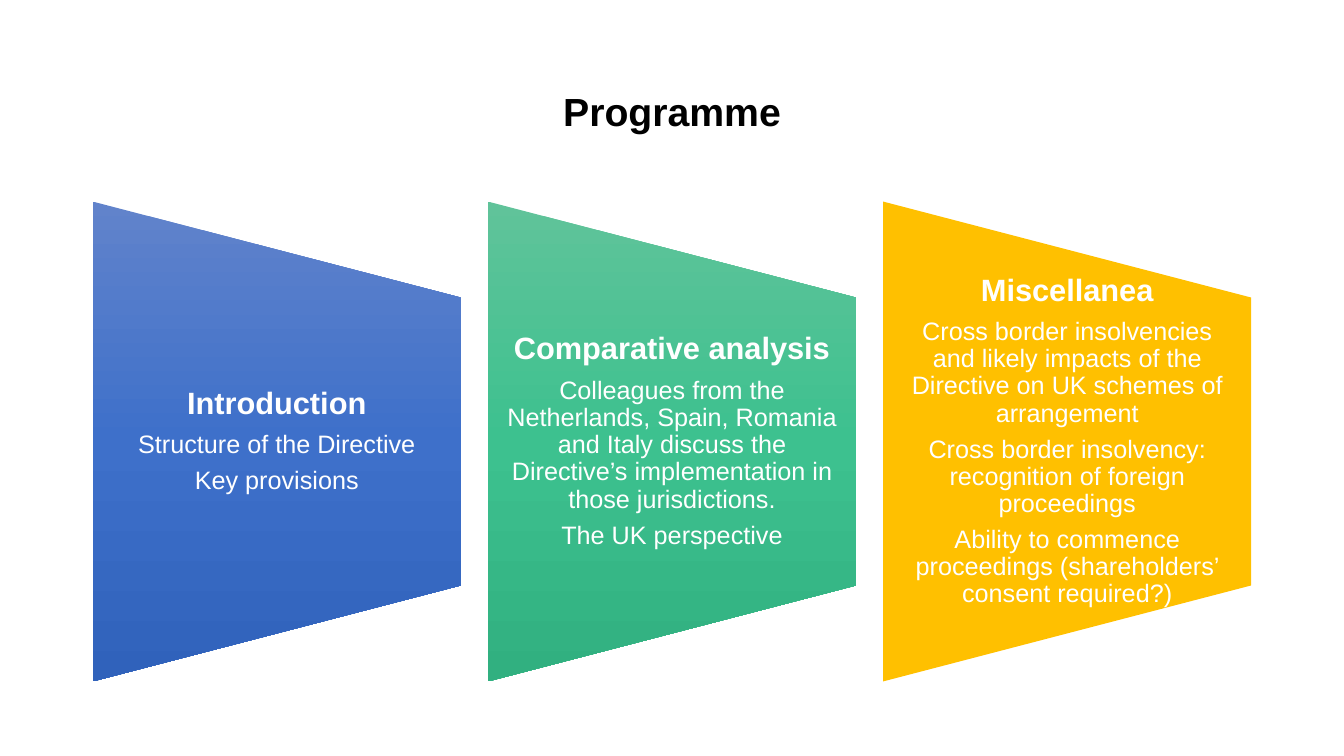
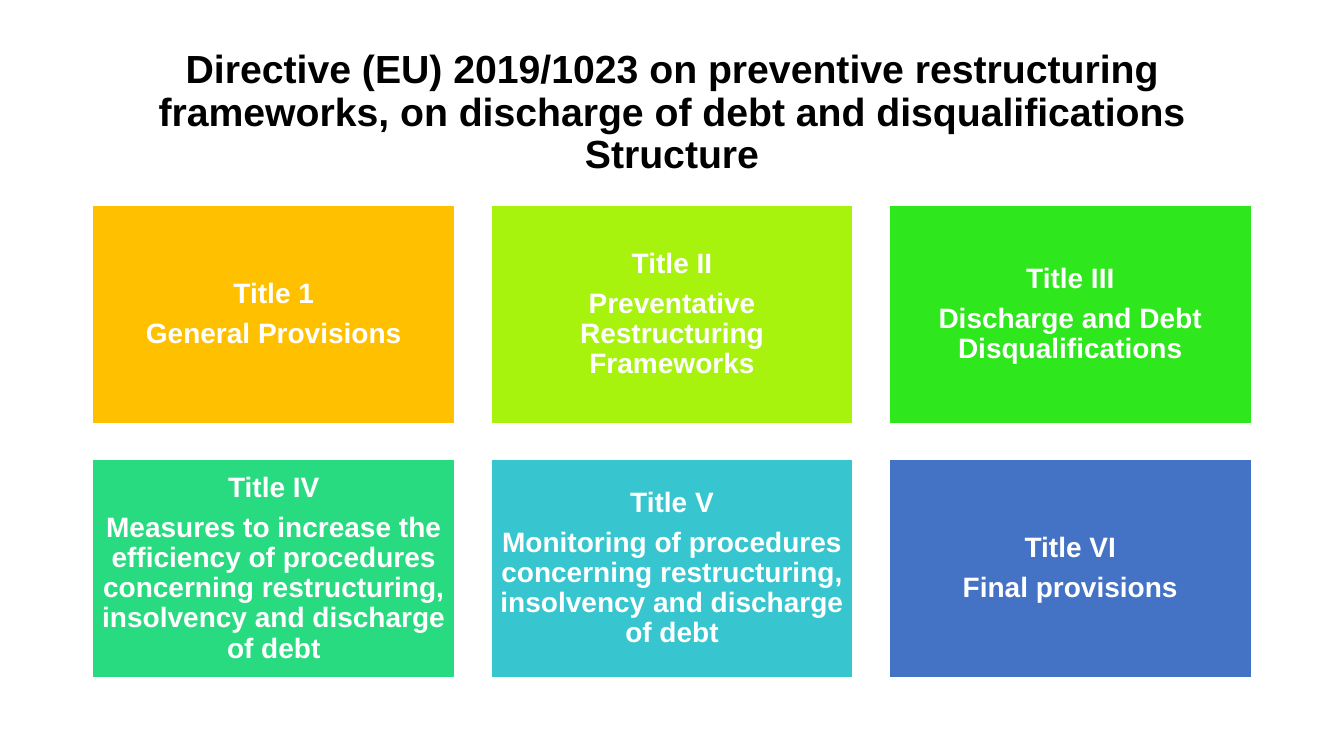
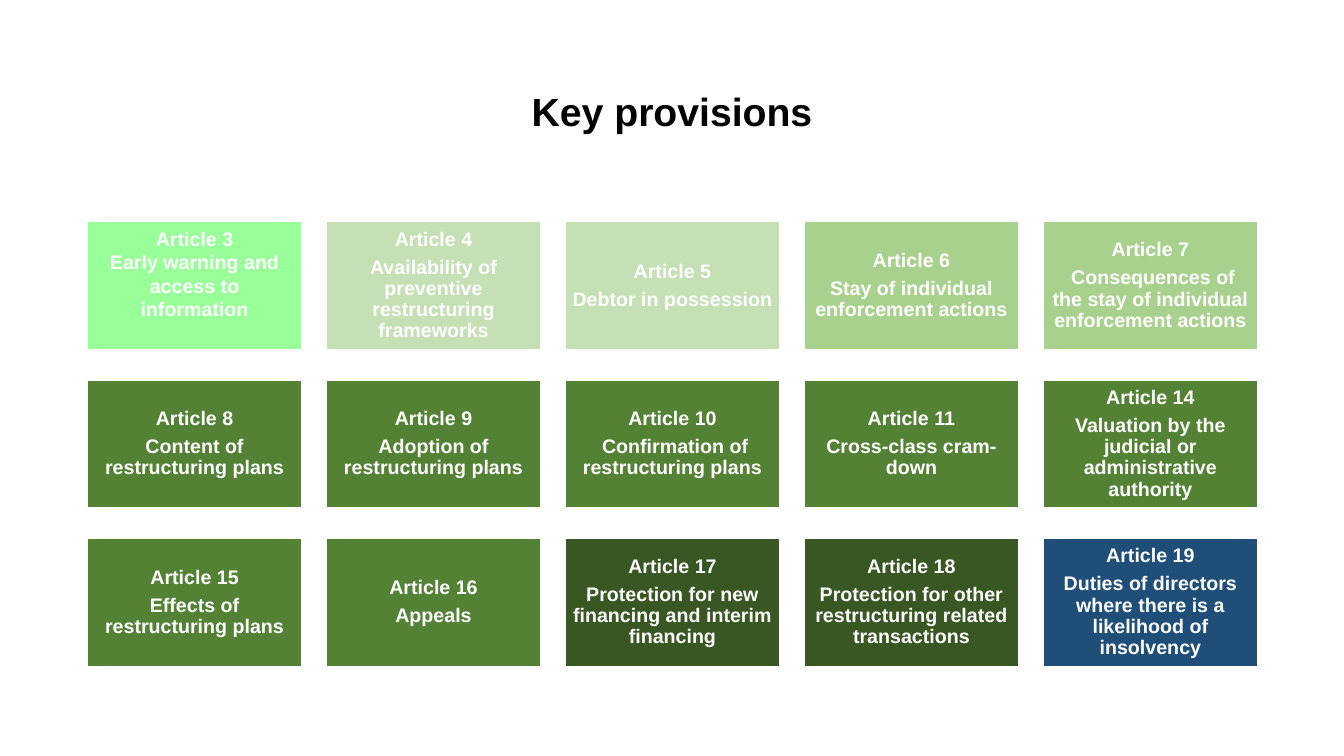
import pptx
import pptx.util
import pptx.dml.color
import pptx.enum.shapes
import pptx.enum.text
import pptx.oxml
import pptx.oxml.ns

Inches = pptx.util.Inches
Pt = pptx.util.Pt
RGB = pptx.dml.color.RGBColor.from_string
SHAPE = pptx.enum.shapes.MSO_SHAPE
ANCHOR = pptx.enum.text.MSO_ANCHOR
CENTER = pptx.enum.text.PP_ALIGN.CENTER

COLORS = {
    "black": "000000", "white": "FFFFFF", "amber": "FFC000",
    "lime": "A7F30E", "green": "2EE71C", "emerald": "29DB80",
    "teal": "37C6CF", "blue": "4472C4", "mint": "99FF99",
    "pale": "C5E0B4", "light": "A9D18E", "mid": "548235",
    "dark": "385723", "navy": "1F4E79",
}
GRADIENTS = {
    "blue_fade": ("6183CB", "3E70CA", "3062BB"),
    "green_fade": ("60C39A", "3DC18F", "31B080"),
}

prs = pptx.Presentation()
prs.slide_width = Inches(13.33)
prs.slide_height = Inches(7.5)
W, H = prs.slide_width, prs.slide_height


def write(tf, lines, sizes, color="white", inset=(0.1, 0.05), spacing=0.9, after=0.35):
    tf.word_wrap = True
    tf.auto_size = pptx.enum.text.MSO_AUTO_SIZE.NONE
    tf.vertical_anchor = ANCHOR.MIDDLE
    tf.margin_left = tf.margin_right = Inches(inset[0])
    tf.margin_top = tf.margin_bottom = Inches(inset[1])
    for i, line in enumerate(lines):
        p = tf.paragraphs[0] if i == 0 else tf.add_paragraph()
        size = sizes[min(i, len(sizes) - 1)]
        p.text = line
        p.alignment = CENTER
        p.line_spacing = spacing
        p.space_before = Pt(0)
        p.space_after = Pt(size * after)
        p.font.name = "Arial"
        p.font.size = Pt(size)
        p.font.bold = i == 0 or len(sizes) == 1
        p.font.color.rgb = RGB(COLORS[color])


def add_slide(title):
    s = prs.slides.add_slide(prs.slide_layouts[5])
    sp = s.shapes.title
    sp.left, sp.top = int(W * 0.07), int(H * 0.05)
    sp.width, sp.height = int(W * 0.86), int(H * 0.2)
    write(sp.text_frame, [title], [28], "black", after=0)
    return s


s = add_slide("Programme")
programme = [
    ("blue_fade", ["Introduction", "Structure of the Directive", "Key provisions"]),
    ("green_fade", [
        "Comparative analysis",
        "Colleagues from the Netherlands, Spain, Romania and Italy discuss "
        "the Directive’s implementation in those jurisdictions.",
        "The UK perspective"]),
    ("amber", [
        "Miscellanea",
        "Cross border insolvencies and likely impacts of the Directive on "
        "UK schemes of arrangement",
        "Cross border insolvency: recognition of foreign proceedings",
        "Ability to commence proceedings (shareholders’ consent required?)"]),
]
left, top, pitch, width, height = 0.92, 2, 3.92, 3.65, 4.76
for col, (fill, lines) in enumerate(programme):
    x = left + col * pitch
    sp = s.shapes.add_shape(
        SHAPE.FLOWCHART_MANUAL_OPERATION,
        Inches(x + (width - height) / 2), Inches(top + (height - width) / 2),
        Inches(height), Inches(width))
    sp.rotation = 270
    sp.shadow.inherit = False
    sp.line.fill.background()
    if fill in GRADIENTS:
        sp.fill.gradient()
        stops = "".join(
            f'<a:gs pos="{i * 50000}"><a:srgbClr val="{c}"/></a:gs>'
            for i, c in enumerate(GRADIENTS[fill]))
        spPr = sp.element.spPr
        spPr.replace(spPr.find(pptx.oxml.ns.qn("a:gradFill")), pptx.oxml.parse_xml(
            f'<a:gradFill {pptx.oxml.ns.nsdecls("a")} rotWithShape="0">'
            f'<a:gsLst>{stops}</a:gsLst><a:lin ang="5400000" scaled="0"/></a:gradFill>'))
    else:
        sp.fill.solid()
        sp.fill.fore_color.rgb = RGB(COLORS[fill])
    tb = s.shapes.add_textbox(
        Inches(x), Inches(top + height * 0.2), Inches(width), Inches(height * 0.6))
    write(tb.text_frame, lines, [22, 18], inset=(0.15, 0))

titles = [
    ("amber", "Title 1", "General Provisions"),
    ("lime", "Title II", "Preventative Restructuring Frameworks"),
    ("green", "Title III", "Discharge and Debt Disqualifications"),
    ("emerald", "Title IV", "Measures to increase the efficiency of procedures "
     "concerning restructuring, insolvency and discharge of debt"),
    ("teal", "Title V", "Monitoring of procedures concerning restructuring, "
     "insolvency and discharge of debt"),
    ("blue", "Title VI", "Final provisions"),
]
articles = [
    ("mint", "Article 3", "Early warning and access to information"),
    ("pale", "Article 4", "Availability of preventive restructuring frameworks"),
    ("pale", "Article 5", "Debtor in possession"),
    ("light", "Article 6", "Stay of individual enforcement actions"),
    ("light", "Article 7", " Consequences of the stay of individual enforcement actions"),
    ("mid", "Article 8", "Content of restructuring plans"),
    ("mid", "Article 9", "Adoption of restructuring plans"),
    ("mid", "Article 10", " Confirmation of restructuring plans"),
    ("mid", "Article 11", "Cross-class cram-down"),
    ("mid", "Article 14", "Valuation by the judicial or administrative authority"),
    ("mid", "Article 15", "Effects of restructuring plans"),
    ("mid", "Article 16", "Appeals"),
    ("dark", "Article 17", "Protection for new financing and interim financing"),
    ("dark", "Article 18", "Protection for other restructuring related transactions"),
    ("navy", "Article 19", "Duties of directors where there is a likelihood of insolvency"),
]
boards = [
    ("Directive (EU) 2019/1023 on preventive restructuring frameworks, on "
     "discharge of debt and disqualifications\vStructure",
     titles, 3, (0.92, 2.04), (3.95, 2.52), (3.59, 2.16), 20, 0.08),
    ("Key provisions",
     articles, 5, (0.87, 2.2), (2.37, 1.57), (2.12, 1.27), 14, 0.06),
]
for title, cards, cols, origin, pitch, size, pts, inset in boards:
    s = add_slide(title)
    for i, (fill, heading, body) in enumerate(cards):
        row, col = divmod(i, cols)
        sp = s.shapes.add_shape(
            SHAPE.RECTANGLE,
            Inches(origin[0] + col * pitch[0]), Inches(origin[1] + row * pitch[1]),
            Inches(size[0]), Inches(size[1]))
        sp.shadow.inherit = False
        sp.fill.solid()
        sp.fill.fore_color.rgb = RGB(COLORS[fill])
        sp.line.color.rgb = RGB(COLORS["white"])
        sp.line.width = Pt(1)
        if fill == "mint":
            write(sp.text_frame, [heading, body], [pts], spacing=1.0, after=0)
            sp.text_frame.vertical_anchor = ANCHOR.TOP
        else:
            write(sp.text_frame, [heading, body], [pts], inset=(inset, inset))

prs.save("out.pptx")
